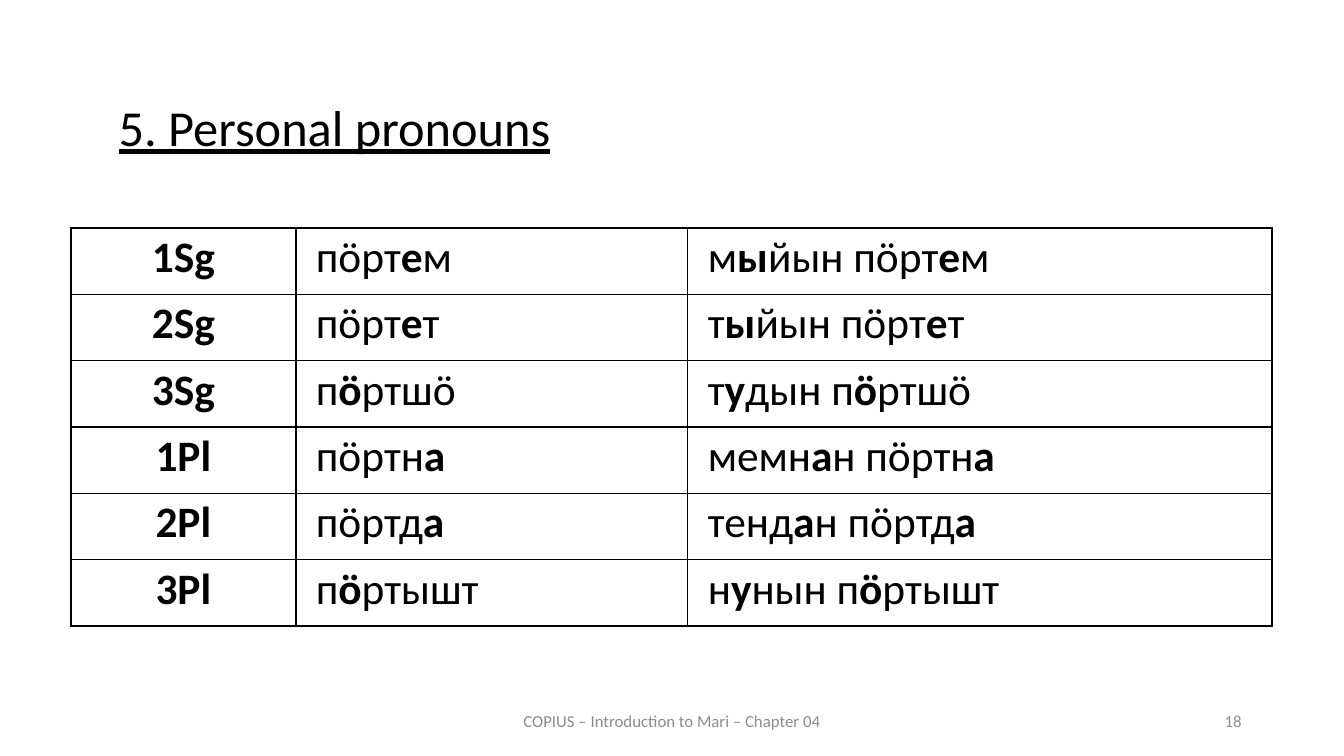
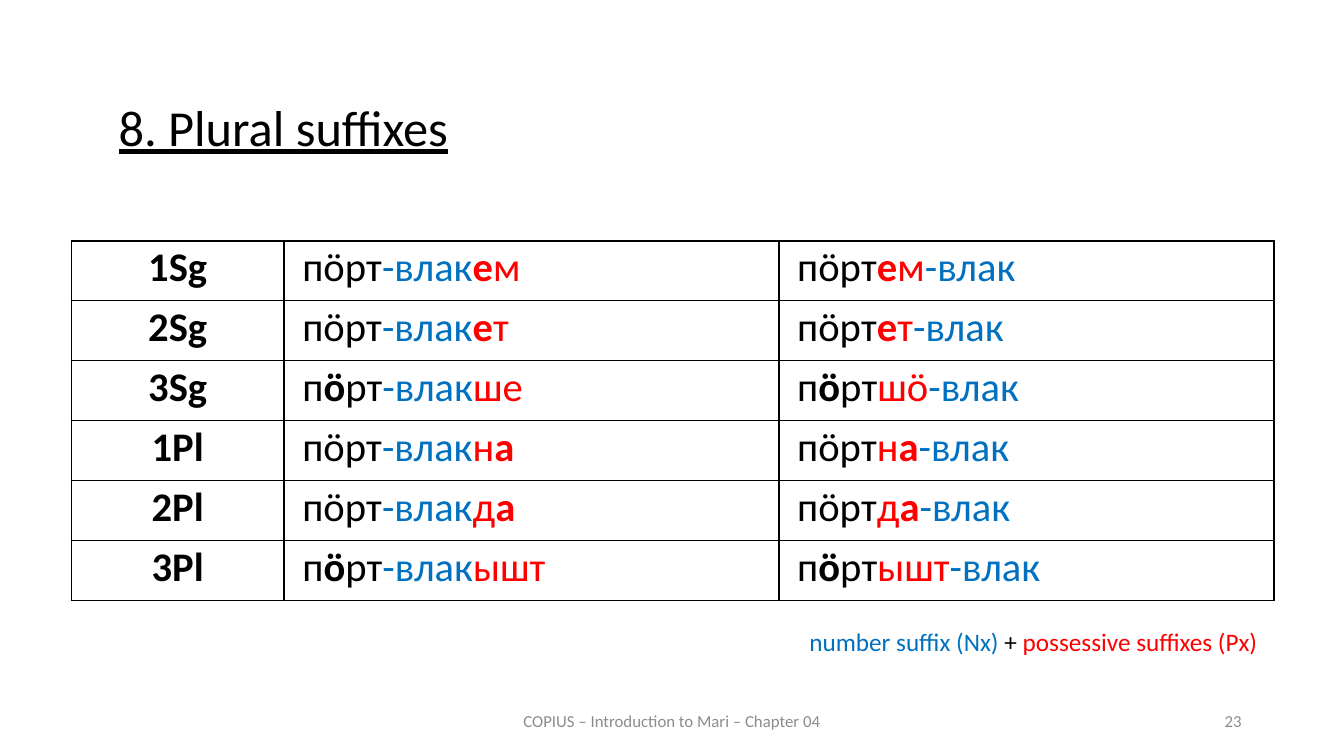
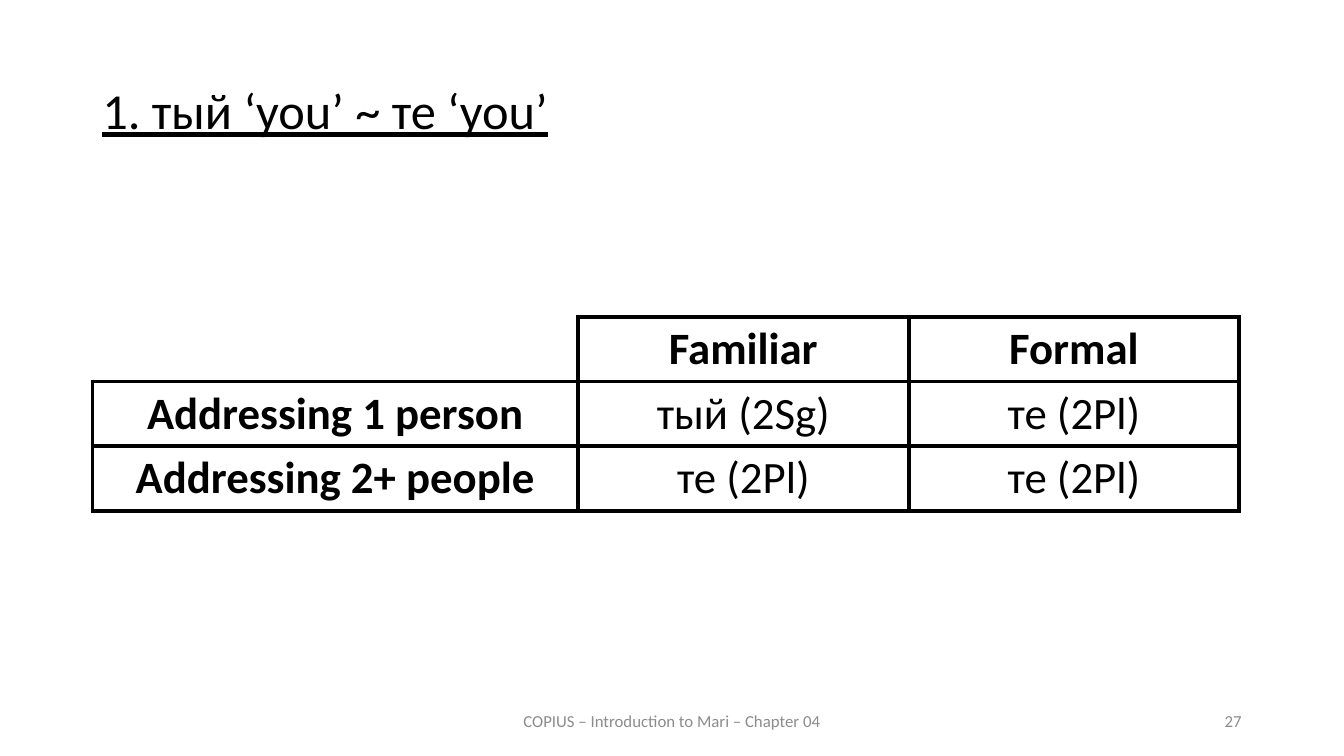
"""Build three Mari grammar slides with pronoun and suffix tables."""
from lxml.etree import SubElement
from pptx import Presentation
from pptx.dml.color import RGBColor
from pptx.enum.text import MSO_ANCHOR, PP_ALIGN
from pptx.oxml import parse_xml
from pptx.oxml.ns import nsdecls, qn
from pptx.util import Cm, Pt

COLORS = {"ink": "000000", "footer": "8C8C8C", "number": "0070C0", "possessive": "FF0000"}
FONT = "Calibri"
FOOTER = "COPIUS – Introduction to Mari – Chapter 04"
LEFT, CENTER, RIGHT, JUSTIFY = PP_ALIGN.LEFT, PP_ALIGN.CENTER, PP_ALIGN.RIGHT, PP_ALIGN.JUSTIFY

PERSONS = ["1Sg", "2Sg", "3Sg", "1Pl", "2Pl", "3Pl"]
POSSESSED = [
    ("пӧрт*е*м", "м*ы*йын"),
    ("пӧрт*е*т", "т*ы*йын"),
    ("п*ӧ*ртшӧ", "т*у*дын"),
    ("пӧртн*а*", "мемн*а*н"),
    ("пӧртд*а*", "тенд*а*н"),
    ("п*ӧ*ртышт", "н*у*нын"),
]
PLURAL = "-влак"
SUFFIXED = [
    ("пӧрт", "*е*м", "*е*м"),
    ("пӧрт", "*е*т", "*е*т"),
    ("п*ӧ*рт", "ше", "шӧ"),
    ("пӧрт", "н*а*", "н*а*"),
    ("пӧрт", "д*а*", "д*а*"),
    ("п*ӧ*рт", "ышт", "ышт"),
]
LEGEND = [("number suffix (Nx) ", "number"), ("+ ", "ink"),
          ("possessive suffixes (Px) ", "possessive")]
ADDRESS = [
    ["", "*Familiar*", "*Formal*"],
    ["*Addressing 1 person*", "тый (2Sg)", "те (2Pl)"],
    ["*Addressing 2+ people*", "те (2Pl)", "те (2Pl)"],
]

pronoun_rows = [[f"*{person}*", noun, f"{pronoun} {noun}"]
                for person, (noun, pronoun) in zip(PERSONS, POSSESSED)]
plural_rows = [
    [f"*{person}*",
     [(stem, "ink"), (PLURAL, "number"), (last, "possessive")],
     [(stem, "ink"), (inner, "possessive"), (PLURAL, "number")]]
    for person, (stem, last, inner) in zip(PERSONS, SUFFIXED)]

PARADIGM = {"aligns": (CENTER, JUSTIFY, JUSTIFY), "col_lines": (1.5, 1.5, 1, 1.5),
            "row_lines": (1.5, 1, 1, 1, 1, 1, 1.5)}
SLIDES = [
    {"number": 18, "title": "5. Personal pronouns", "title_at": (2.74, 1.45),
     "title_align": LEFT, "before": 12,
     "table": {**PARADIGM, "rows": pronoun_rows, "at": (1.79, 5.75),
               "cols": (5.66, 9.88, 14.73), "row_height": 1.67, "size": 31,
               "insets": (0.51, 0.08, 0.51, 0)}},
    {"number": 23, "title": "8. Plural suffixes", "title_at": (2.74, 1.45),
     "title_align": LEFT, "before": 12, "legend": LEGEND,
     "table": {**PARADIGM, "rows": plural_rows, "at": (1.8, 6.07),
               "cols": (5.36, 12.47, 12.47), "row_height": 1.51, "size": 29,
               "insets": (0.46, 0.05, 0.46, 0)}},
    {"number": 27, "title": "1. тый ‘you’ ~ те ‘you’", "title_at": (2.33, 1.02),
     "title_align": JUSTIFY, "before": 18,
     "table": {"rows": ADDRESS, "at": (2.33, 7.98), "cols": (12.24, 8.33, 8.33),
               "row_height": 1.63, "size": 32, "insets": (0.25, 0.13, 0.25, 0.13),
               "aligns": (CENTER,) * 3, "col_lines": (3,) * 4, "row_lines": (3,) * 4}},
]


def add_runs(p, content, size, color="ink", underline=None):
    """Add coloured pieces as runs, with text between asterisks in bold."""
    pieces = [(content, color)] if isinstance(content, str) else content
    for text, name in pieces:
        for i, part in enumerate(text.split("*")):
            if part:
                r = p.add_run()
                r.text = part
                r.font.name = FONT
                r.font.size = Pt(size)
                r.font.bold = i % 2 == 1
                r.font.underline = underline
                r.font.color.rgb = RGBColor.from_string(COLORS[name])


def add_text(s, box, content, size, align, anchor=MSO_ANCHOR.MIDDLE, before=0,
             spacing=None, **style):
    """Add a one-paragraph text box."""
    tf = s.shapes.add_textbox(*map(Cm, box)).text_frame
    tf.word_wrap = True
    tf.vertical_anchor = anchor
    p = tf.paragraphs[0]
    p.alignment = align
    p.space_before = Pt(before)
    p.line_spacing = spacing
    add_runs(p, content, size, **style)


def set_borders(cell, widths):
    """Draw the left, right, top and bottom lines; a zero width draws none."""
    tc_pr = cell._tc.get_or_add_tcPr()
    for i, (side, width) in enumerate(zip("LRTB", widths)):
        ln = parse_xml(f'<a:ln{side} {nsdecls("a")} w="{Pt(width)}"/>')
        if width:
            fill = SubElement(ln, qn("a:solidFill"))
            SubElement(fill, qn("a:srgbClr"), val=COLORS["ink"])
        else:
            SubElement(ln, qn("a:noFill"))
        tc_pr.insert(i, ln)


def add_grid(s, rows, at, cols, row_height, size, insets, aligns, col_lines, row_lines):
    """Add a ruled table without fills."""
    box = (*at, sum(cols), row_height * len(rows))
    table = s.shapes.add_table(len(rows), len(cols), *map(Cm, box)).table
    table.first_row = table.horz_banding = False
    for col, width in zip(table.columns, cols):
        col.width = Cm(width)
    for i, row in enumerate(rows):
        table.rows[i].height = Cm(row_height)
        for j, content in enumerate(row):
            cell = table.cell(i, j)
            cell.margin_left, cell.margin_top, cell.margin_right, cell.margin_bottom = map(Cm, insets)
            cell.fill.background()
            left, top = (col_lines[j], row_lines[i]) if content else (0, 0)
            set_borders(cell, (left, col_lines[j + 1], top, row_lines[i + 1]))
            p = cell.text_frame.paragraphs[0]
            p.alignment = aligns[j]
            add_runs(p, content, size)


def add_slide(prs, data):
    """Add one slide with title, table, optional legend and footer."""
    s = prs.slides.add_slide(prs.slide_layouts[6])
    add_text(s, (*data["title_at"], 29.21, 3.68), data["title"], 36, data["title_align"],
             before=data["before"], spacing=0.9, underline=True)
    add_grid(s, **data["table"])
    if "legend" in data:
        add_text(s, (15.14, 15.67, 16.94, 1.02), data["legend"], 18, RIGHT,
                 anchor=MSO_ANCHOR.TOP, before=12)
    add_text(s, (11.22, 17.65, 11.43, 1.02), FOOTER, 12, CENTER, color="footer")
    add_text(s, (23.92, 17.65, 7.62, 1.02), str(data["number"]), 12, RIGHT, color="footer")


def main():
    """Build and save the presentation."""
    prs = Presentation()
    prs.slide_width, prs.slide_height = Cm(33.87), Cm(19.05)
    for data in SLIDES:
        add_slide(prs, data)
    prs.save("out.pptx")


if __name__ == "__main__":
    main()
